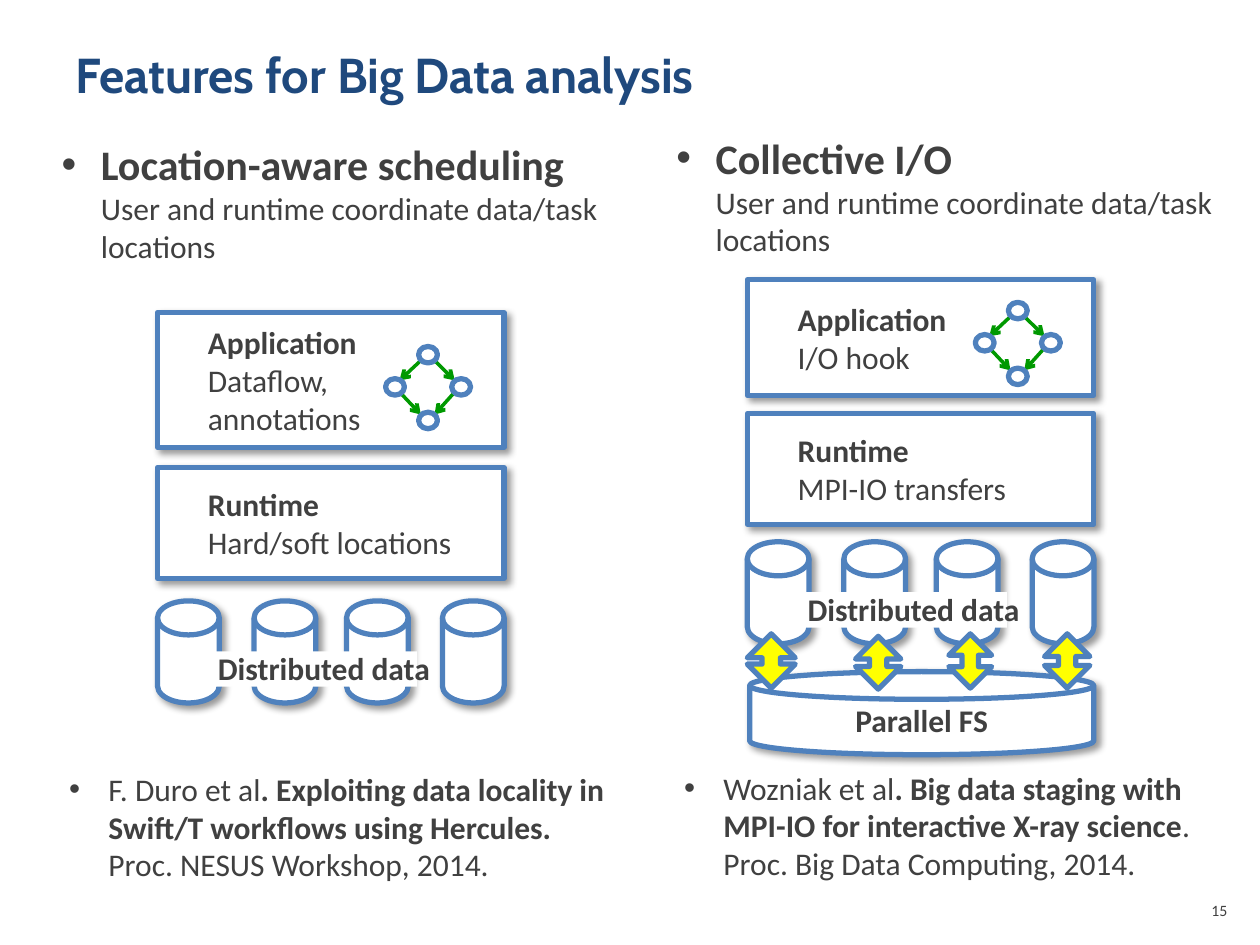
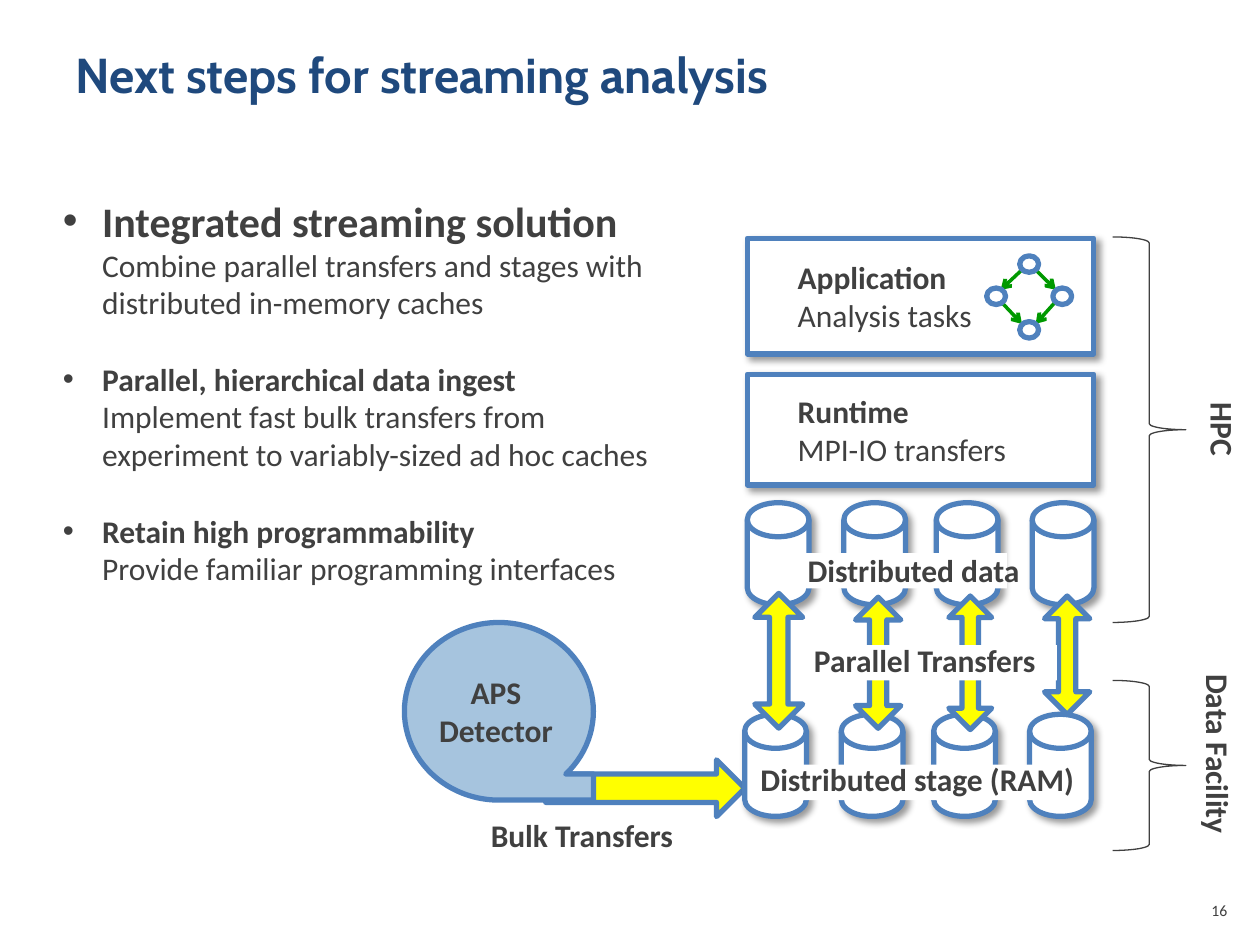
from dataclasses import dataclass
from typing import NamedTuple

from lxml import etree
from pptx import Presentation
from pptx.dml.color import RGBColor
from pptx.enum.shapes import MSO_CONNECTOR, MSO_SHAPE
from pptx.enum.text import MSO_ANCHOR, PP_ALIGN
from pptx.oxml.ns import qn
from pptx.util import Pt

RECT, OVAL, DISK = MSO_SHAPE.RECTANGLE, MSO_SHAPE.OVAL, MSO_SHAPE.FLOWCHART_MAGNETIC_DISK
TAPE = MSO_SHAPE.FLOWCHART_SEQUENTIAL_ACCESS_STORAGE
TWO_WAY, RIGHT_ARROW, BRACE = MSO_SHAPE.UP_DOWN_ARROW, MSO_SHAPE.RIGHT_ARROW, MSO_SHAPE.RIGHT_BRACE
STRAIGHT = MSO_CONNECTOR.STRAIGHT
LEFT, CENTER, RIGHT = PP_ALIGN.LEFT, PP_ALIGN.CENTER, PP_ALIGN.RIGHT
TOP, MIDDLE = MSO_ANCHOR.TOP, MSO_ANCHOR.MIDDLE

NAVY, INK, BLUE, GREEN = "1F497D", "404040", "4F81BD", "009900"
WHITE, YELLOW, PALE_BLUE = "FFFFFF", "FFFF00", "A6C4DE"
TITLE_FONT, BODY_FONT = "Cabin", "Calibri"

STACK_W, RUNTIME_H = 198, 63.4
DISK_W, DISK_H = 35.3, 58.3
DISK_OFFSETS = (0, 55.2, 108, 162.8)
NODE_W, NODE_H = 10.8, 9.4
NODES = ((0, 18.4), (18.9, 0), (37.8, 18.4), (18.9, 37.6))
EDGES = ((20.2, 8, 8, 19.4), (28, 8, 39.6, 19.4),
         (39.6, 26, 28, 38.9), (8.6, 26.6, 20.2, 38.9))


class Box(NamedTuple):
    x: float
    y: float
    w: float
    h: float


class Span(NamedTuple):
    """A run of text; a newline in it becomes a line break."""
    text: str
    bold: bool = False
    size: float = 18


Paragraph = list[Span]


@dataclass
class Stack:
    """Application, runtime and data layers drawn one above the other."""
    x: float
    app_y: float
    app_h: float
    runtime_y: float
    disk_y: float
    app_text: str
    runtime_text: str
    graph: tuple[float, float]


def rgb(color: str) -> RGBColor:
    return RGBColor.from_string(color)


def heading(head: str, detail: str, size: float = 18) -> Paragraph:
    return [Span(head, True, size), Span("\n" + detail)]


def write(s, paragraphs: list[Paragraph], align=LEFT, anchor=TOP, color: str = INK,
          font: str = BODY_FONT, bullets: bool = False, wrap: bool = True) -> None:
    tf = s.text_frame
    tf.word_wrap, tf.vertical_anchor = wrap, anchor
    for i, spans in enumerate(paragraphs):
        p = tf.add_paragraph() if i else tf.paragraphs[0]
        p.alignment = align
        if bullets:
            pPr = p._p.get_or_add_pPr()
            pPr.set("marL", str(Pt(22.5)))
            pPr.set("indent", str(-Pt(22.5)))
            etree.SubElement(pPr, qn("a:buFont"), typeface="Arial")
            etree.SubElement(pPr, qn("a:buChar"), char="•")
        if i:
            p.space_before = Pt(22)
        for span in spans:
            for j, line in enumerate(span.text.split("\n")):
                if j:
                    p.add_line_break()
                if not line:
                    continue
                r = p.add_run()
                r.text = line
                r.font.name, r.font.size, r.font.bold = font, Pt(span.size), span.bold
                r.font.color.rgb = rgb(color)


def add_text(slide, box: Box, paragraphs: list[Paragraph], rotation: float = 0, **style):
    s = slide.shapes.add_textbox(*map(Pt, box))
    s.rotation = rotation
    write(s, paragraphs, **style)
    return s


def add_label(slide, box: Box, text: str, align=CENTER, **style):
    return add_text(slide, box, [[Span(text, True)]], align=align, **style)


def add_shape(slide, kind, box: Box, fill: str | None = None, line: str | None = BLUE,
              width: float = 3, shadow: bool = False):
    s = slide.shapes.add_shape(kind, *map(Pt, box))
    s.shadow.inherit = False
    if fill:
        s.fill.solid()
        s.fill.fore_color.rgb = rgb(fill)
    else:
        s.fill.background()
    if line:
        s.line.color.rgb = rgb(line)
        s.line.width = Pt(width)
    else:
        s.line.fill.background()
    if shadow:
        effects = s._element.spPr.find(qn("a:effectLst"))
        outer = etree.SubElement(effects, qn("a:outerShdw"), blurRad=str(Pt(4)),
                                 dist=str(Pt(3)), dir="2700000", algn="tl", rotWithShape="0")
        black = etree.SubElement(outer, qn("a:srgbClr"), val="000000")
        etree.SubElement(black, qn("a:alpha"), val="40000")
    return s


def add_arrow(slide, x1: float, y1: float, x2: float, y2: float) -> None:
    s = slide.shapes.add_connector(STRAIGHT, Pt(x1), Pt(y1), Pt(x2), Pt(y2))
    s.line.color.rgb = rgb(GREEN)
    s.line.width = Pt(2)
    etree.SubElement(s.line._get_or_add_ln(), qn("a:tailEnd"), type="arrow")
    etree.SubElement(s._element.spPr, qn("a:effectLst"))


def add_layer(slide, box: Box, head: str, detail: str) -> None:
    s = add_shape(slide, RECT, box, WHITE, shadow=True)
    s.text_frame.margin_left = Pt(28.8)
    write(s, [heading(head, detail)], anchor=MIDDLE)


def add_task_graph(slide, x: float, y: float) -> None:
    for x1, y1, x2, y2 in EDGES:
        add_arrow(slide, x + x1, y + y1, x + x2, y + y2)
    for dx, dy in NODES:
        add_shape(slide, OVAL, Box(x + dx, y + dy, NODE_W, NODE_H))


def add_disks(slide, x: float, y: float, mask_w: float) -> None:
    for dx in DISK_OFFSETS:
        add_shape(slide, DISK, Box(x + dx, y, DISK_W, DISK_H), WHITE, shadow=True)
    add_shape(slide, RECT, Box(x + 27.4, y + 28.8, mask_w, 20.2), WHITE, None)


def add_stack(slide, st: Stack) -> None:
    add_disks(slide, st.x, st.disk_y, 121)
    add_label(slide, Box(st.x + 27.4, st.disk_y + 23.8, 135.4, 29), "Distributed data", LEFT)
    add_layer(slide, Box(st.x, st.app_y, STACK_W, st.app_h), "Application", st.app_text)
    add_layer(slide, Box(st.x, st.runtime_y, STACK_W, RUNTIME_H), "Runtime", st.runtime_text)
    add_task_graph(slide, *st.graph)


def add_transfers(slide, boxes: list[Box]) -> None:
    for box in boxes:
        s = add_shape(slide, TWO_WAY, box, YELLOW)
        s.adjustments[0], s.adjustments[1] = 0.343, 0.382


def new_slide(prs, title: str, number: int):
    slide = prs.slides.add_slide(prs.slide_layouts[6])
    add_text(slide, Box(36, 21.6, 648, 90), [[Span(title, True, 28)]],
             color=NAVY, font=TITLE_FONT)
    add_text(slide, Box(678.2, 511.2, 30.2, 28.8), [[Span(str(number), size=9)]], align=RIGHT)
    return slide


def build_features(prs) -> None:
    slide = new_slide(prs, "Features for Big Data analysis", 15)
    detail = "User and runtime coordinate data/task locations"
    for x, y, head in ((28.1, 75.6, "Location-aware scheduling"), (379.4, 72, "Collective I/O")):
        add_text(slide, Box(x, y, 324, 80), [heading(head, detail, 24)], bullets=True)

    add_stack(slide, Stack(90, 178.6, 77, 267.1, 343.4, "Dataflow,\nannotations",
                           "Hard/soft locations", (220.3, 198)))
    add_stack(slide, Stack(427, 159.8, 66.2, 236.2, 309.6, "I/O hook",
                           "MPI-IO transfers", (557.3, 172.8)))

    # Parallel file system below the right stack
    fs = add_shape(slide, DISK, Box(428.4, 383.8, 196.6, 47.5), WHITE, shadow=True)
    write(fs, [[Span("Parallel FS", True)]], align=CENTER, anchor=MIDDLE)
    add_transfers(slide, [Box(427, 362.2, 27.4, 31), Box(488.9, 363.6, 25.9, 30.2),
                          Box(542.2, 362.2, 24.5, 31), Box(596.9, 362.2, 25.9, 31)])

    # References
    add_text(slide, Box(32.4, 436.3, 329.8, 72.7), [[
        Span("F. Duro et al"),
        Span(". Exploiting data locality in Swift/T workflows using Hercules.", True),
        Span("\nProc. NESUS Workshop, 2014.")]], bullets=True)
    add_text(slide, Box(383.8, 435.6, 329.8, 72.7), [[
        Span("Wozniak et al"),
        Span(". Big data staging with MPI-IO for interactive X-ray science", True),
        Span(".\nProc. Big Data Computing, 2014.")]], bullets=True)


def build_next_steps(prs) -> None:
    slide = new_slide(prs, "Next steps for streaming analysis", 16)
    add_shape(slide, RIGHT_ARROW, Box(311.8, 434.2, 113.8, 32.4), YELLOW)
    add_text(slide, Box(28.8, 108, 355.7, 232.6), [
        heading("Integrated streaming solution",
                "Combine parallel transfers and stages with distributed in-memory caches", 24),
        heading("Parallel, hierarchical data ingest",
                "Implement fast bulk transfers from experiment to variably-sized ad hoc caches"),
        heading("Retain high programmability", "Provide familiar programming interfaces"),
    ], bullets=True)

    # Staging disks, compute stack and the transfers between them
    add_disks(slide, 425.5, 408.2, 138.2)
    add_label(slide, Box(423.4, 430.6, 201.6, 29), "Distributed stage (RAM)")
    add_stack(slide, Stack(427, 136.1, 66.2, 213.8, 287.3, "Analysis tasks",
                           "MPI-IO transfers", (563.8, 146.2)))
    add_transfers(slide, [Box(431.3, 339.1, 27.4, 77), Box(488.9, 341.3, 25.9, 74.9),
                          Box(542.2, 340.6, 24.5, 76.3), Box(596.9, 340.6, 25.9, 67.7)])
    add_shape(slide, RECT, Box(465.8, 368.6, 138.2, 20.2), WHITE, None)
    add_label(slide, Box(452.9, 362.9, 151.2, 29), "Parallel Transfers")

    # Detector
    add_shape(slide, TAPE, Box(231.1, 355.7, 108, 101.5), PALE_BLUE)
    detector = add_shape(slide, RECT, Box(243.4, 380.9, 80, 51), PALE_BLUE, None)
    write(detector, [[Span("APS\nDetector", True)]], align=CENTER, wrap=False)
    add_label(slide, Box(257, 463, 151.2, 29), "Bulk Transfers")

    # Braces naming the two sites
    for y, h in ((135.4, 220.3), (388.8, 97.2)):
        add_shape(slide, BRACE, Box(635.8, y, 41.8, h), line=INK, width=0.75)
    add_label(slide, Box(676.1, 231.1, 45.4, 29), "HPC", LEFT, rotation=90, wrap=False)
    add_label(slide, Box(643, 416.9, 106.6, 29), "Data Facility", LEFT, rotation=90, wrap=False)


def main() -> None:
    prs = Presentation()
    prs.slide_width, prs.slide_height = Pt(720), Pt(540)
    build_features(prs)
    build_next_steps(prs)
    prs.save("out.pptx")


if __name__ == "__main__":
    main()
